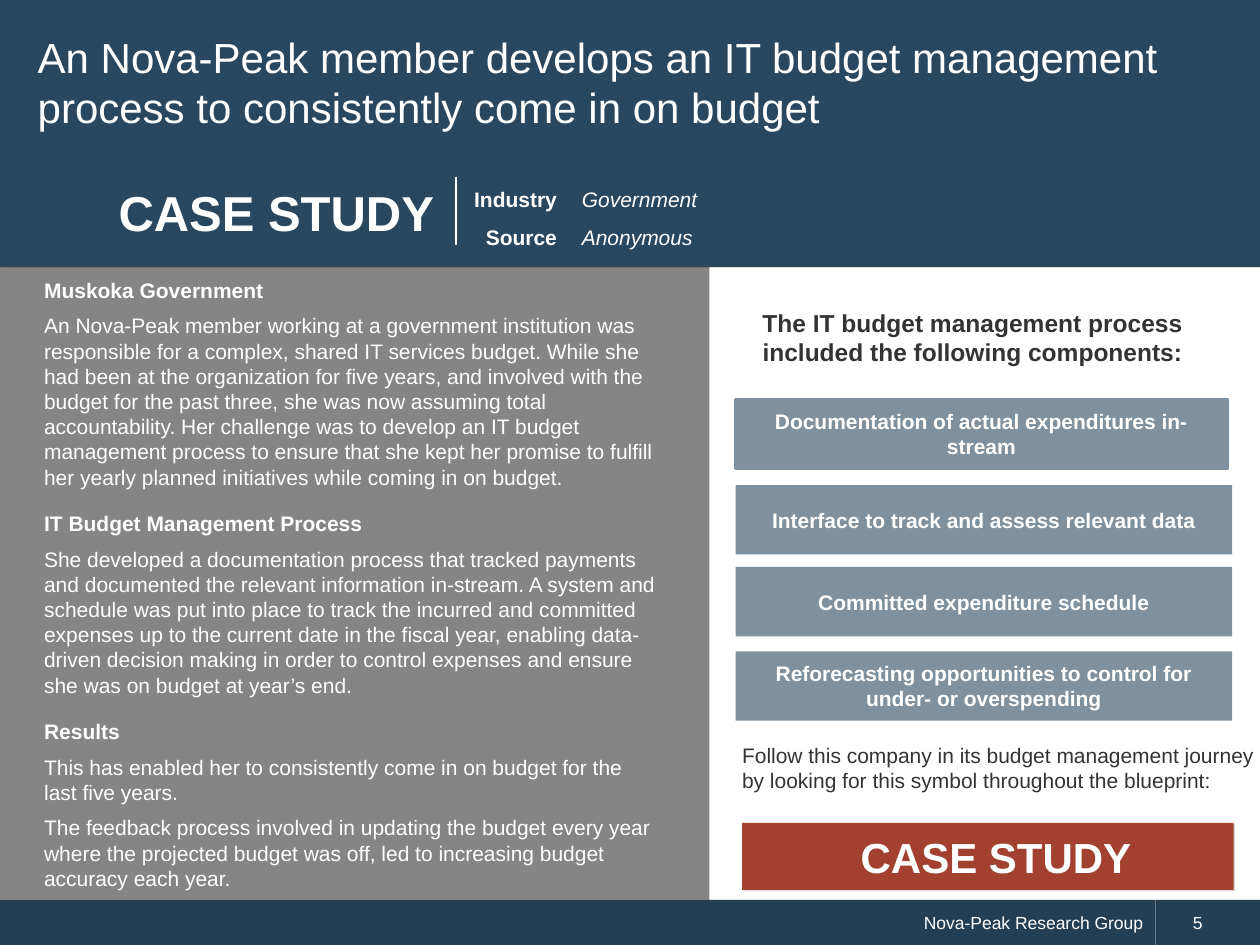
"""Build a case study slide about managing a yearly budget."""
from dataclasses import dataclass

from lxml.etree import SubElement
from pptx import Presentation
from pptx.dml.color import RGBColor
from pptx.enum.shapes import MSO_CONNECTOR, MSO_SHAPE
from pptx.enum.text import MSO_ANCHOR, MSO_AUTO_SIZE, PP_ALIGN
from pptx.oxml.ns import qn
from pptx.util import Cm, Pt


@dataclass(frozen=True)
class Theme:
    """Hold the colours, type sizes and font."""
    navy: str = "29475F"
    foot: str = "243F54"
    grey: str = "858585"
    steel: str = "7F919F"
    red: str = "A24130"
    white: str = "FFFFFF"
    ink: str = "333333"
    font: str = "Arial"
    small: int = 10
    text: int = 12
    lead: int = 14
    title: int = 24
    case: int = 28


THEME = Theme()


@dataclass(frozen=True)
class Box:
    """Describe a rectangle in centimetres, with its text and look."""
    left: float
    top: float
    width: float
    height: float
    text: str = ""
    fill: str = ""
    size: int = THEME.text
    color: str = THEME.white
    bold: bool = False
    slant: bool = False
    align: PP_ALIGN = PP_ALIGN.LEFT
    anchor: MSO_ANCHOR = MSO_ANCHOR.MIDDLE
    inset: float = 0.25
    inset_end: float = 0.25
    inset_top: float = 0.13
    space: float = 1.0
    after: float = 0
    edge: float = 0
    shade: bool = False


@dataclass(frozen=True)
class Part:
    """Pair a story heading with its paragraphs."""
    head: str
    lines: tuple[str, ...]


STORY = (
    Part("Muskoka Government", (
        "An Nova-Peak member working at a government institution was responsible for a complex, "
        "shared IT services budget. While she had been at the organization for five years, and "
        "involved with the budget for the past three, she was now assuming total accountability. "
        "Her challenge was to develop an IT budget management process to ensure that she kept her "
        "promise to fulfill her yearly planned initiatives while coming in on budget.",)),
    Part("IT Budget Management Process", (
        "She developed a documentation process that tracked payments and documented the relevant "
        "information in-stream. A system and schedule was put into place to track the incurred and "
        "committed expenses up to the current date in the fiscal year, enabling data-driven "
        "decision making in order to control expenses and ensure she was on budget at year’s end.",)),
    Part("Results", (
        "This has enabled her to consistently come in on budget for the last five years.",
        "The feedback process involved in updating the budget every year where the projected "
        "budget was off, led to increasing budget accuracy each year.")),
)

TITLE = Box(0, 0, 25.4, 3.3,
            "An Nova-Peak member develops an IT budget management process "
            "to consistently come in on budget",
            THEME.navy, THEME.title, inset=0.76, inset_end=0.76, inset_top=0.25, after=8)

BODY = Box(0.64, 5.46, 12.93, 12.75,
           "\n".join(line for part in STORY for line in (part.head, *part.lines)),
           anchor=MSO_ANCHOR.TOP, after=6)

BARS = (
    (8.05, 9.91, 2, "Documentation of actual expenditures in-stream"),
    (9.78, 10.01, 0, "Interface to track and assess relevant data"),
    (11.43, 10.01, 0, "Committed expenditure schedule"),
    (13.13, 10.01, 0, "Reforecasting opportunities to control for under- or overspending"),
)

BOXES = (
    Box(0, 18.14, 23.29, 0.93, "Nova-Peak Research Group", THEME.foot, THEME.small,
        align=PP_ALIGN.RIGHT),
    Box(23.29, 18.14, 2.11, 0.93, "5", THEME.foot, THEME.small, inset=0.76),
    Box(0, 5.23, 14.3, 12.91, fill=THEME.grey),
    Box(14.1, 6.07, 11.02, 1.45,
        "The IT budget management process included the following components:",
        size=THEME.lead, color=THEME.ink, bold=True, align=PP_ALIGN.CENTER,
        anchor=MSO_ANCHOR.TOP),
    *(Box(14.83, top, width, 1.4, text, THEME.steel, bold=True,
          align=PP_ALIGN.CENTER, edge=edge) for top, width, edge, text in BARS),
    Box(0, 3.18, 25.4, 2.2, "CASE STUDY", THEME.navy, THEME.case, bold=True,
        inset=2.39, shade=True),
    Box(9.07, 3.38, 2.41, 1.7, "Industry\nSource", THEME.navy, bold=True,
        align=PP_ALIGN.RIGHT, anchor=MSO_ANCHOR.TOP, space=1.5),
    Box(11.48, 3.38, 10.39, 1.8, "Government\nAnonymous", slant=True,
        anchor=MSO_ANCHOR.TOP, space=1.5),
    Box(14.71, 14.83, 11.02, 1.27,
        "Follow this company in its budget management journey by looking for this symbol "
        "throughout the blueprint:", color=THEME.ink, anchor=MSO_ANCHOR.TOP),
    Box(14.96, 16.59, 9.91, 1.35, "CASE STUDY", THEME.red, THEME.title, bold=True,
        inset=2.39, shade=True),
)


def tint(hue: str) -> RGBColor:
    """Turn a hex string into a colour."""
    return RGBColor.from_string(hue)


def write(shape, box: Box) -> None:
    """Set and format the text of a shape."""
    frame = shape.text_frame
    frame.text = box.text
    frame.word_wrap = True
    frame.auto_size = MSO_AUTO_SIZE.NONE
    frame.vertical_anchor = box.anchor
    frame.margin_left, frame.margin_right = Cm(box.inset), Cm(box.inset_end)
    frame.margin_top = frame.margin_bottom = Cm(box.inset_top)
    for para in frame.paragraphs:
        para.alignment = box.align
        para.line_spacing = box.space
        para.space_before, para.space_after = Pt(0), Pt(box.after)
        for run in para.runs:
            font = run.font
            font.name, font.size = THEME.font, Pt(box.size)
            font.bold, font.italic = box.bold, box.slant
            font.color.rgb = tint(box.color)


def paint(shape, box: Box) -> None:
    """Set the fill and edge of a shape."""
    shape.fill.solid()
    shape.fill.fore_color.rgb = tint(box.fill)
    if box.edge:
        shape.line.color.rgb = tint(box.fill)
        shape.line.width = Pt(box.edge)
    else:
        shape.line.fill.background()


def shade(shape) -> None:
    """Give a shape a faint, sharp shadow."""
    effects = shape.element.spPr.find(qn("a:effectLst"))
    outer = SubElement(effects, qn("a:outerShdw"), blurRad="0", dist=str(Pt(1)),
                       dir="2700000", algn="tl", rotWithShape="0")
    hue = SubElement(outer, qn("a:srgbClr"), val="000000")
    SubElement(hue, qn("a:alpha"), val="14000")


def draw(slide, box: Box):
    """Add a filled rectangle or a plain text box."""
    place = [Cm(n) for n in (box.left, box.top, box.width, box.height)]
    if box.fill:
        shape = slide.shapes.add_shape(MSO_SHAPE.RECTANGLE, *place)
        shape.shadow.inherit = False
        paint(shape, box)
        if box.shade:
            shade(shape)
    else:
        shape = slide.shapes.add_textbox(*place)
    if box.text:
        write(shape, box)
    return shape


def rule(slide, left: float, top: float, end: float) -> None:
    """Draw a thin upright white line."""
    line = slide.shapes.add_connector(MSO_CONNECTOR.STRAIGHT, Cm(left), Cm(top), Cm(left), Cm(end))
    line.line.color.rgb = tint(THEME.white)
    line.line.width = Pt(0.75)
    SubElement(line.element.spPr, qn("a:effectLst"))


def main() -> None:
    """Build and save the slide."""
    deck = Presentation()
    deck.slide_width, deck.slide_height = Cm(25.4), Cm(19.05)
    slide = deck.slides.add_slide(deck.slide_layouts[5])
    title = slide.shapes.title
    title.left, title.top = Cm(TITLE.left), Cm(TITLE.top)
    title.width, title.height = Cm(TITLE.width), Cm(TITLE.height)
    paint(title, TITLE)
    write(title, TITLE)
    for box in BOXES:
        draw(slide, box)
    rule(slide, 9.19, 3.56, 4.93)
    heads = [part.head for part in STORY]
    for para in draw(slide, BODY).text_frame.paragraphs:
        if para.text in heads:
            para.runs[0].font.bold = True
            para.space_before = Pt(6 if para.text != heads[0] else 0)
    deck.save("out.pptx")


if __name__ == "__main__":
    main()
